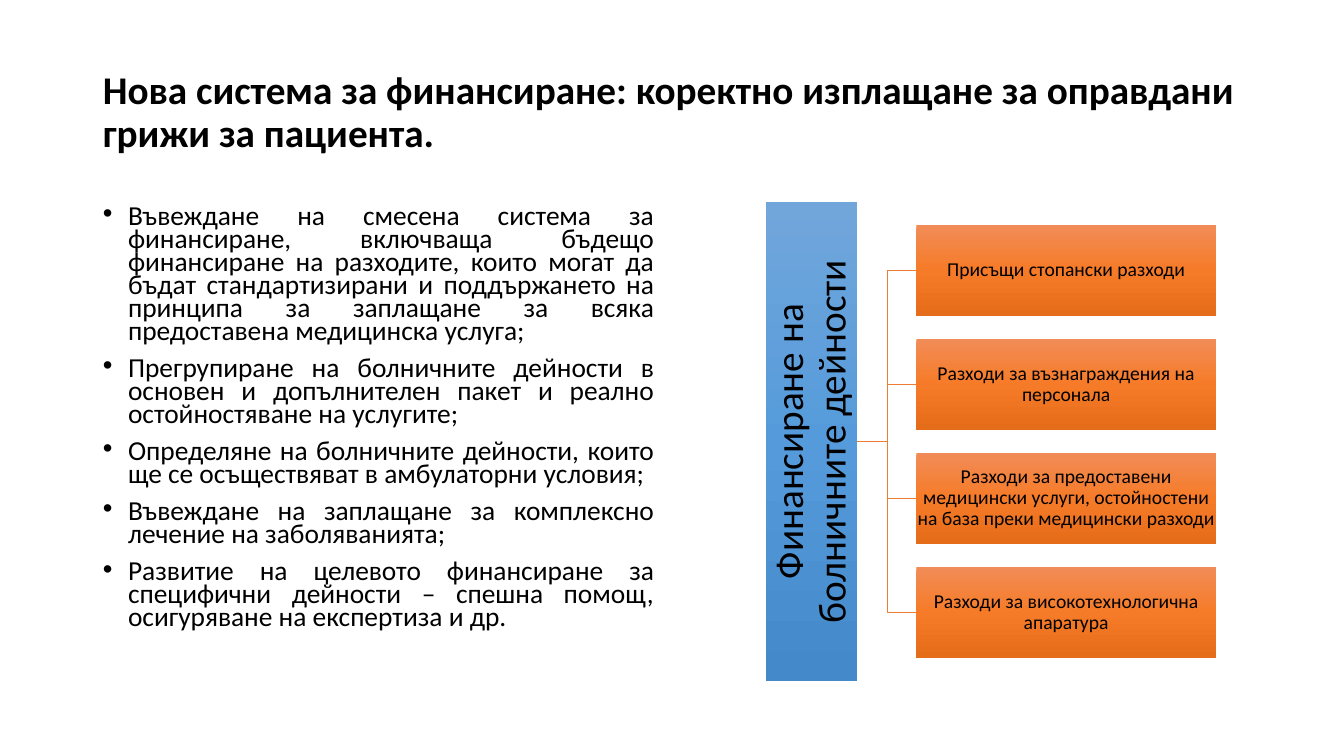
from copy import deepcopy

from pptx import Presentation
from pptx.dml.color import RGBColor
from pptx.enum.shapes import MSO_SHAPE
from pptx.enum.text import MSO_ANCHOR, MSO_AUTO_SIZE, PP_ALIGN
from pptx.oxml.ns import qn
from pptx.util import Inches, Pt

COLORS = {
    "text": "000000",
    "line": "ED7D31",
    "blue": ("71A6DB", "559BDB", "448ACA"),
    "orange": ("F18C57", "F67B28", "E56C19"),
}
TITLE = "Нова система за финансиране: коректно изплащане за оправдани грижи за пациента."
MEASURES = [
    "Въвеждане на смесена система за финансиране, включваща бъдещо финансиране на разходите, "
    "които могат да бъдат стандартизирани и поддържането на принципа за заплащане за всяка "
    "предоставена медицинска услуга;",
    "Прегрупиране на болничните дейности в основен и допълнителен пакет и реално "
    "остойностяване на услугите;",
    "Определяне на болничните дейности, които ще се осъществяват в амбулаторни условия;",
    "Въвеждане на заплащане за комплексно лечение на заболяванията;",
    "Развитие на целевото финансиране за специфични дейности – спешна помощ, осигуряване "
    "на експертиза и др.",
]
ROOT = "Финансиране на болничните дейности"
COSTS = [
    "Присъщи стопански разходи",
    "Разходи за възнаграждения на персонала",
    "Разходи за предоставени медицински услуги, остойностени на база преки медицински разходи",
    "Разходи за високотехнологична апаратура",
]


def style_paragraph(paragraph, size, alignment, line_spacing, bold=False):
    paragraph.alignment = alignment
    paragraph.line_spacing = line_spacing
    paragraph.font.name = "Calibri"
    paragraph.font.size = Pt(size)
    paragraph.font.bold = bold
    paragraph.font.color.rgb = RGBColor.from_string(COLORS["text"])


def add_gradient_box(slide, box, text, size, inset, gradient, rotation=0):
    """Add a centred text box whose three-colour gradient always runs down the slide."""
    shape = slide.shapes.add_shape(MSO_SHAPE.RECTANGLE, *map(Inches, box))
    shape.rotation = rotation
    shape.shadow.inherit = False
    shape.line.fill.background()
    shape.fill.gradient()
    shape.fill.gradient_angle = 270
    gradient_fill = shape._element.spPr.find(qn("a:gradFill"))
    gradient_fill.set("rotWithShape", "0")
    stop_list = gradient_fill.find(qn("a:gsLst"))
    stop_list.append(deepcopy(stop_list[-1]))
    for stop, position, color in zip(shape.fill.gradient_stops, (0, 0.5, 1), gradient):
        stop.position = position
        stop.color.rgb = RGBColor.from_string(color)

    frame = shape.text_frame
    frame.word_wrap = True
    frame.vertical_anchor = MSO_ANCHOR.MIDDLE
    frame.margin_left = frame.margin_right = Inches(inset)
    frame.margin_top = frame.margin_bottom = Inches(inset)
    frame.text = text
    style_paragraph(frame.paragraphs[0], size, PP_ALIGN.CENTER, 0.9)


presentation = Presentation()
presentation.slide_width = Inches(13.33)
presentation.slide_height = Inches(7.5)
slide = presentation.slides.add_slide(presentation.slide_layouts[1])

# Title and list
title, body = slide.placeholders
for placeholder, box, texts in (
    (title, (0.92, 0.4, 11.5, 1.45), [TITLE]),
    (body, (0.92, 2, 5.67, 4.76), MEASURES),
):
    placeholder.left, placeholder.top, placeholder.width, placeholder.height = map(Inches, box)
    placeholder.text_frame.text = "\n".join(texts)
    placeholder.text_frame.auto_size = MSO_AUTO_SIZE.NONE
title.text_frame.vertical_anchor = MSO_ANCHOR.MIDDLE
style_paragraph(title.text_frame.paragraphs[0], 28, PP_ALIGN.LEFT, 0.9, bold=True)
for paragraph in body.text_frame.paragraphs:
    style_paragraph(paragraph, 19.6, PP_ALIGN.JUSTIFY, 0.7)
    paragraph.space_before = Pt(10)
    properties = paragraph._p.get_or_add_pPr()
    properties.set("marL", str(Inches(0.25)))
    properties.set("indent", str(-Inches(0.25)))

# Tree of costs
root_right, middle_x, cost_left, center_y = 8.5, 8.8, 9.09, 4.38
box_height, cost_width, pitch = 0.9, 2.97, 1.13
cost_centers = [center_y + (index - 1.5) * pitch for index in range(len(COSTS))]

for cost_y in cost_centers:
    builder = slide.shapes.build_freeform(Inches(root_right), Inches(center_y))
    points = [(middle_x, center_y), (middle_x, cost_y), (cost_left, cost_y)]
    builder.add_line_segments([(Inches(x), Inches(y)) for x, y in points], close=False)
    branch = builder.convert_to_shape()
    branch.shadow.inherit = False
    branch.fill.background()
    branch.line.color.rgb = RGBColor.from_string(COLORS["line"])
    branch.line.width = Pt(1)

root_box = (5.67, center_y - box_height / 2, 4.76, box_height)
add_gradient_box(slide, root_box, ROOT, 28, 0.02, COLORS["blue"], rotation=270)
for cost, cost_y in zip(COSTS, cost_centers):
    cost_box = (cost_left, cost_y - box_height / 2, cost_width, box_height)
    add_gradient_box(slide, cost_box, cost, 14, 0.01, COLORS["orange"])

presentation.save("out.pptx")
